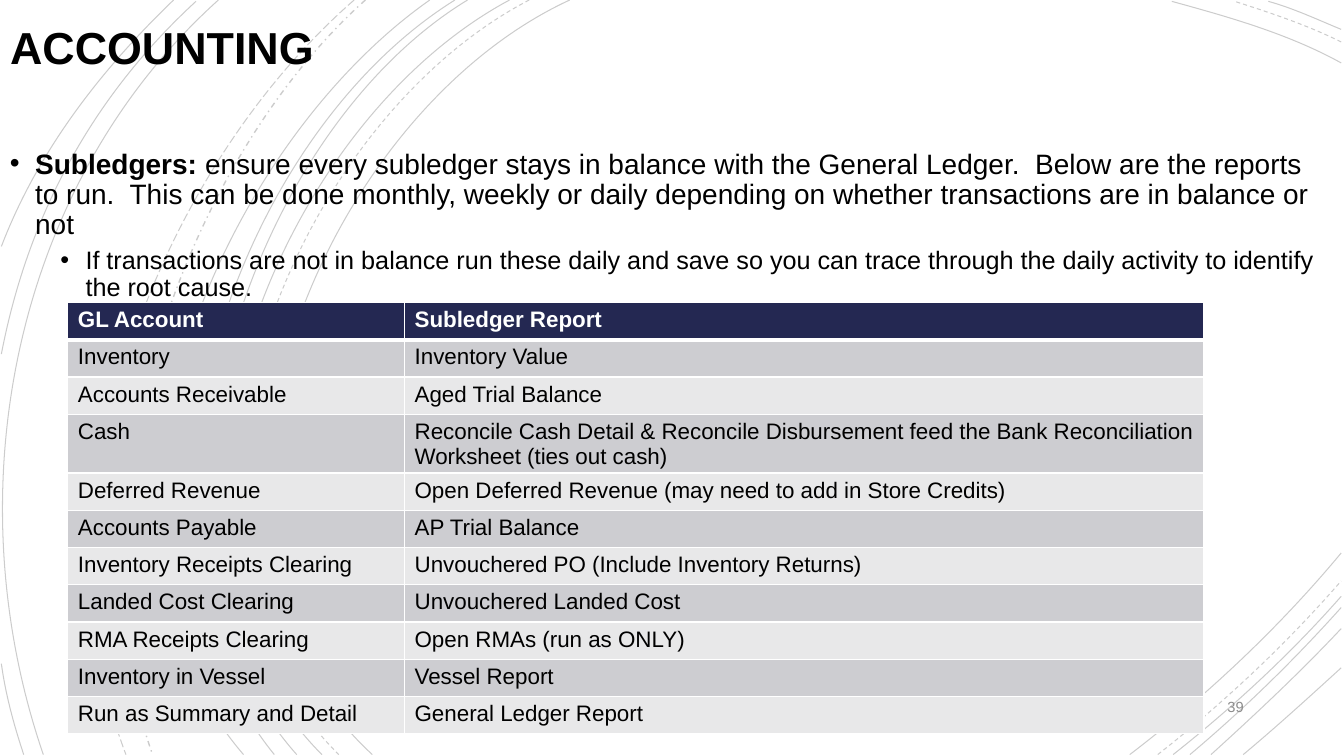
from lxml.etree import SubElement as Sub
from pptx import Presentation
from pptx.dml.color import RGBColor as Rgb
from pptx.enum.dml import MSO_LINE as Dash
from pptx.enum.text import MSO_ANCHOR as Anchor, MSO_AUTO_SIZE as Fit, PP_ALIGN as Align
from pptx.oxml.ns import qn
from pptx.util import Pt

SOLID = [
    (407, 0, 227, 83, 103, 389, 266, 539),
    (958, 45, 920, 24, 877, 12, 837, 1),
    (807, 539, 862, 497, 914, 448, 958, 395),
    (364, 0, 194, 91, 79, 387, 230, 539),
    (958, 21, 941, 14, 924, 6, 906, 1),
    (838, 539, 881, 505, 922, 467, 958, 426),
    (334, 0, 176, 96, 79, 390, 212, 539),
    (850, 539, 888, 507, 924, 472, 958, 434),
    (325, 0, 166, 99, 70, 384, 196, 539),
    (865, 539, 897, 510, 929, 480, 958, 449),
    (307, 0, 156, 106, 38, 381, 174, 539),
    (888, 539, 912, 519, 935, 498, 958, 477),
    (156, 0, 8, 133, -33, 353, 31, 539),
    (140, 1, 66, 69, 20, 154, 1, 253),
    (1, 474, 4, 496, 10, 518, 17, 539),
    (124, 0, 72, 50, 27, 108, 1, 176),
]
DASHED = [
    (378, 0, 205, 90, 89, 387, 242, 539),
    (958, 30, 934, 18, 907, 9, 882, 1),
    (827, 539, 873, 503, 918, 461, 958, 415),
]
DOTTED = (261, 0, 127, 120, 47, 366, 109, 539)
LONG = (253, 0, 113, 122, 21, 359, 90, 539)
ROWS = [
    ("GL Account", "Subledger Report"),
    ("Inventory", "Inventory Value"),
    ("Accounts Receivable", "Aged Trial Balance"),
    ("Cash", "Reconcile Cash Detail & Reconcile Disbursement feed the Bank "
             "Reconciliation Worksheet (ties out cash)"),
    ("Deferred Revenue", "Open Deferred Revenue (may need to add in Store Credits)"),
    ("Accounts Payable", "AP Trial Balance"),
    ("Inventory Receipts Clearing", "Unvouchered PO (Include Inventory Returns)"),
    ("Landed Cost Clearing", "Unvouchered Landed Cost"),
    ("RMA Receipts Clearing", "Open RMAs (run as ONLY)"),
    ("Inventory in Vessel", "Vessel Report"),
    ("Run as Summary and Detail", "General Ledger Report"),
]


def color(text):
    return Rgb.from_string(text)


def style(para, size, tint="000000", bold=None):
    font = para.font
    font.name, font.size, font.bold = "Arial", Pt(size), bold
    font.color.rgb = color(tint)


def place(shape, left, top, width, height):
    shape.left, shape.top = Pt(left), Pt(top)
    shape.width, shape.height = Pt(width), Pt(height)


def bend(shape):
    legs = list(shape._element.iter(qn("a:lnTo")))
    route = legs[0].getparent()
    curve = Sub(route, qn("a:cubicBezTo"))
    for leg in legs:
        curve.append(leg[0])
        route.remove(leg)


def add_arc(slide, curve, dash=Dash.SOLID, width=0.75):
    dots = [(Pt(x), Pt(y)) for x, y in zip(curve[::2], curve[1::2])]
    pen = slide.shapes.build_freeform(*dots[0])
    pen.add_line_segments(dots[1:], close=False)
    arc = pen.convert_to_shape()
    bend(arc)
    arc.shadow.inherit = False
    arc.fill.background()
    line = arc.line
    line.width, line.dash_style = Pt(width), dash
    line.color.rgb = color("000000")
    for tone in arc._element.spPr.iter(qn("a:srgbClr")):
        Sub(tone, qn("a:alpha"), val="20000")


def add_box(slide, left, top, width, height):
    box = slide.shapes.add_textbox(Pt(left), Pt(top), Pt(width), Pt(height))
    box.text_frame.word_wrap = True
    return box.text_frame


def add_bullet(para, indent, size, parts):
    props = para._p.get_or_add_pPr()
    props.set("marL", str(Pt(indent)))
    props.set("indent", str(Pt(-18)))
    Sub(props, qn("a:buFont"), typeface="Arial")
    Sub(props, qn("a:buChar"), char="•")
    para.line_spacing = 0.9
    for text, bold in parts:
        run = para.add_run()
        run.text = text
        if bold:
            run.font.bold = True
    style(para, size)


def add_edge(cell, side, width):
    edge = Sub(cell._tc.get_or_add_tcPr(), qn("a:ln" + side), w=str(Pt(width)))
    Sub(Sub(edge, qn("a:solidFill")), qn("a:srgbClr"), val="FFFFFF")


def fill_cell(cell, text, row):
    head = row == 0
    for side in "LRTB":
        thick = (side == "B" and head) or (side == "T" and row == 1)
        add_edge(cell, side, 3 if thick else 1)
    cell.fill.solid()
    cell.fill.fore_color.rgb = color("242852" if head else ("E8E8E9", "CDCDD1")[row % 2])
    cell.margin_bottom = Pt(0)
    cell.text = text
    style(cell.text_frame.paragraphs[0], 16, "FFFFFF" if head else "000000", head)


def add_grid(slide):
    grid = slide.shapes.add_table(len(ROWS), 2, Pt(48.5), Pt(216), Pt(811.5), Pt(308.4)).table
    for col, width in zip(grid.columns, (240.5, 571)):
        col.width = Pt(width)
    for row, texts in enumerate(ROWS):
        grid.rows[row].height = Pt(42 if texts[0] == "Cash" else 26.64)
        for col, text in enumerate(texts):
            fill_cell(grid.cell(row, col), text, row)


def set_title(slide):
    title = slide.shapes.title
    slide.shapes._spTree.append(title._element)
    place(title, 0, 0, 754.5, 71)
    frame = title.text_frame
    frame.text = "ACCOUNTING"
    frame.auto_size, frame.vertical_anchor = Fit.NONE, Anchor.MIDDLE
    para = frame.paragraphs[0]
    para.alignment, para.line_spacing = Align.LEFT, 0.9
    style(para, 32, bold=True)


def add_body(slide):
    frame = add_box(slide, 0, 103.5, 960, 424)
    add_bullet(frame.paragraphs[0], 18, 20, [
        ("Subledgers: ", True),
        ("ensure every subledger stays in balance with the General Ledger.  Below are "
         "the reports to run.  This can be done monthly, weekly or daily depending on "
         "whether transactions are in balance or not", False)])
    para = frame.add_paragraph()
    para.level, para.space_before = 1, Pt(5)
    add_bullet(para, 54, 18, [
        ("If transactions are not in balance run these daily and save so you can trace "
         "through the daily activity to identify the root cause.", False)])


def add_number(slide):
    frame = add_box(slide, 823.5, 492, 72, 25)
    frame.vertical_anchor = Anchor.MIDDLE
    para = frame.paragraphs[0]
    para.text, para.alignment = "39", Align.RIGHT
    style(para, 10.5, "8C8C8C")


def main():
    deck = Presentation()
    deck.slide_width, deck.slide_height = Pt(960), Pt(540)
    slide = deck.slides.add_slide(deck.slide_layouts[5])
    for curve in SOLID:
        add_arc(slide, curve)
    for curve in DASHED:
        add_arc(slide, curve, Dash.DASH)
    add_arc(slide, DOTTED, Dash.DASH_DOT, 1)
    add_arc(slide, LONG, Dash.LONG_DASH)
    set_title(slide)
    add_body(slide)
    add_number(slide)
    add_grid(slide)
    deck.save("out.pptx")


if __name__ == "__main__":
    main()
